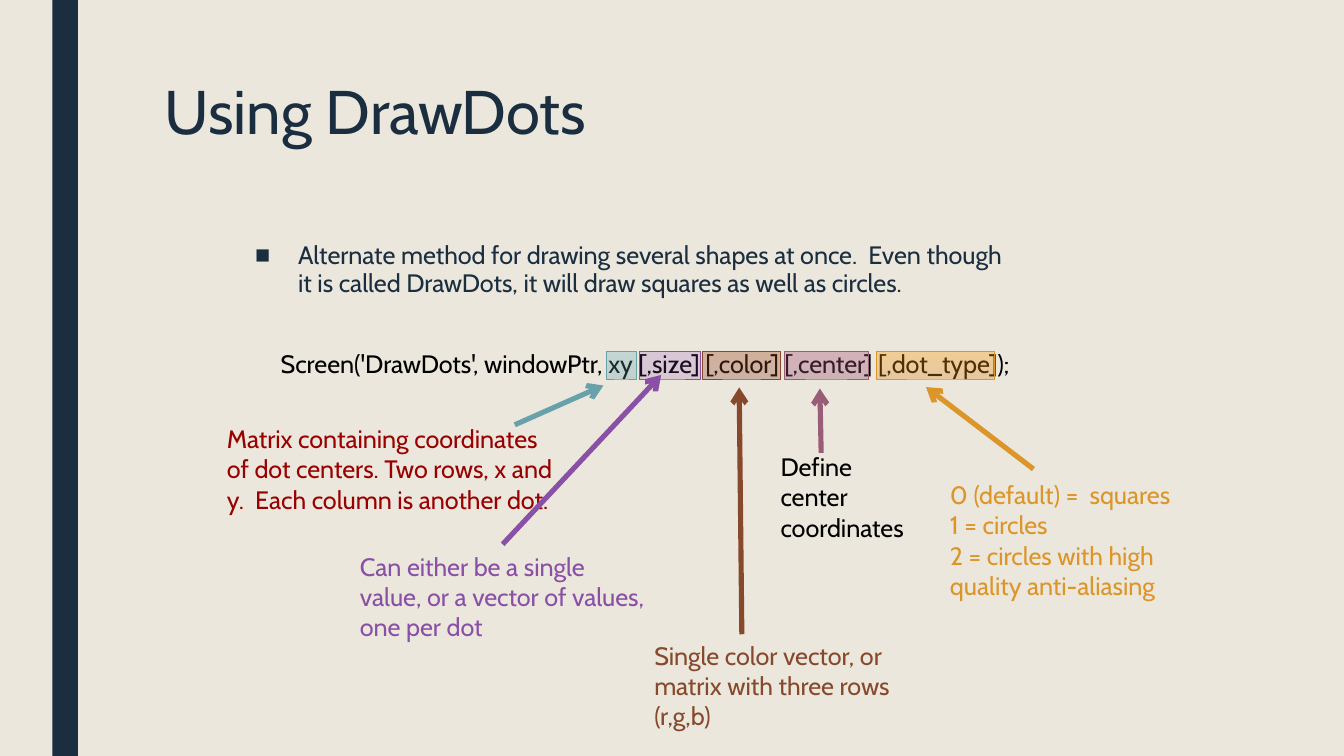
"""Build the slide that explains the arguments of DrawDots."""
from pptx import Presentation
from pptx.dml.color import RGBColor
from pptx.enum.shapes import MSO_CONNECTOR, MSO_SHAPE
from pptx.enum.text import MSO_ANCHOR, PP_ALIGN
from pptx.oxml.ns import qn
from pptx.util import Inches, Pt
from lxml.etree import SubElement

COLORS = {
    "paper": "EBE7DD", "navy": "1A2E40", "black": "000000", "red": "990000",
    "teal": "69A1AB", "purple": "8950A6", "brown": "87492C",
    "orange": "DC9528", "plum": "9A5D78",
}
RGB = {name: RGBColor.from_string(value) for name, value in COLORS.items()}

prs = Presentation()
prs.slide_width = Inches(10)
prs.slide_height = prs.slide_width * 9 // 16
COL, ROW = prs.slide_width / 100, prs.slide_height / 100
s = prs.slides.add_slide(prs.slide_layouts[6])
s.background.fill.solid()
s.background.fill.fore_color.rgb = RGB["paper"]


def grid(*cells):
    return [round(c * (ROW if i % 2 else COL)) for i, c in enumerate(cells)]


def add_text(cells, lines, color, size=13.5, **spacing):
    tf = s.shapes.add_textbox(*grid(*cells)).text_frame
    tf.word_wrap, tf.vertical_anchor = True, MSO_ANCHOR.TOP
    for i, line in enumerate(lines):
        p = tf.paragraphs[0] if i == 0 else tf.add_paragraph()
        for key, value in {"alignment": PP_ALIGN.LEFT, **spacing}.items():
            setattr(p, key, value)
        r = p.add_run()
        r.text = line
        font = {"name": "Cabin", "size": Pt(size)}
        for key, value in font.items():
            setattr(r.font, key, value)
        r.font.color.rgb = RGB[color]
    return tf


sp = s.shapes.add_shape(MSO_SHAPE.RECTANGLE, *grid(3.9, 0, 1.9, 100))
sp.shadow.inherit = False
sp.fill.solid()
sp.fill.fore_color.rgb = RGB["navy"]
sp.line.fill.background()

add_text((11.25, 10, 78.75, 21.7), ["Using DrawDots"], "navy", 33, line_spacing=0.89)

tf = add_text(
    (18, 31.1, 58, 18.3),
    ["Alternate method for drawing several shapes at once.  Even though "
     "it is called DrawDots, it will draw squares as well as circles."],
    "navy", line_spacing=0.94, space_before=Pt(7.5), space_after=Pt(1.5))
pPr = tf.paragraphs[0]._p.get_or_add_pPr()
pPr.set("marL", str(Inches(0.32)))
pPr.set("indent", str(-Inches(0.32)))
SubElement(pPr, qn("a:buFont"), typeface="Arial")
SubElement(pPr, qn("a:buChar"), char="■")

add_text(
    (19.9, 45.2, 61.9, 5.9),
    ["Screen('DrawDots', windowPtr, xy [,size] [,color] [,center] [,dot_type]);"],
    "black")

callouts = [
    ("teal", (45.1, 2.3), ("5A98A3", "58ACBB", 27), (38.3, 56.2, 44.9, 51),
     (15.9, 55.15, 26.2, 13.9), "red",
     ["Matrix containing coordinates of dot centers. Two rows, x and y.  "
      "Each column is another dot."]),
    ("purple", (47.6, 4.5), ("8146A3", "903BBC", 18), (37.4, 72, 49.2, 49.6),
     (25.8, 72, 23.3, 13.9), "purple",
     ["Can either be a single value, or a vector of values, one per dot"]),
    ("brown", (52.3, 5.8), ("8A4A35", "9E4115", 32), (55.2, 83.9, 55, 51.25),
     (47.7, 83.8, 23.3, 13.9), "brown",
     ["Single color vector, or matrix with three rows (r,g,b)"]),
    ("orange", (65.2, 8.8), ("DD8923", "FF9C05", 33), (76.9, 62.05, 68.9, 51.2),
     (69.7, 62.55, 18.6, 18), "orange",
     ["0 (default) =  squares", "1 = circles",
      "2 = circles with high quality anti-aliasing"]),
    ("plum", (58.4, 6.2), ("95536F", "A94E76", 34), (61.1, 59.9, 61, 51.4),
     (57.1, 58.85, 11.6, 13.9), "black", ["Define center coordinates"]),
]
for color, (left, width), (start, end, alpha), arrow, cells, ink, lines in callouts:
    sp = s.shapes.add_shape(MSO_SHAPE.RECTANGLE, *grid(left, 46.55, width, 3.6))
    sp.shadow.inherit = False
    sp.fill.gradient()
    sp.fill.gradient_angle = 90
    for stop, tint in zip(sp.fill.gradient_stops, (start, end)):
        stop.color.rgb = RGBColor.from_string(tint)
    for clr in sp._element.spPr.iter(qn("a:srgbClr")):
        SubElement(clr, qn("a:alpha"), val=str(alpha * 1000))
    sp.line.color.rgb, sp.line.width = RGB[color], Pt(0.5)

    cxn = s.shapes.add_connector(MSO_CONNECTOR.STRAIGHT, *grid(*arrow))
    cxn.line.color.rgb, cxn.line.width = RGB[color], Pt(2.75)
    SubElement(cxn.line._get_or_add_ln(), qn("a:tailEnd"), type="arrow")
    SubElement(cxn._element.spPr, qn("a:effectLst"))

    add_text(cells, lines, ink)

prs.save("out.pptx")
